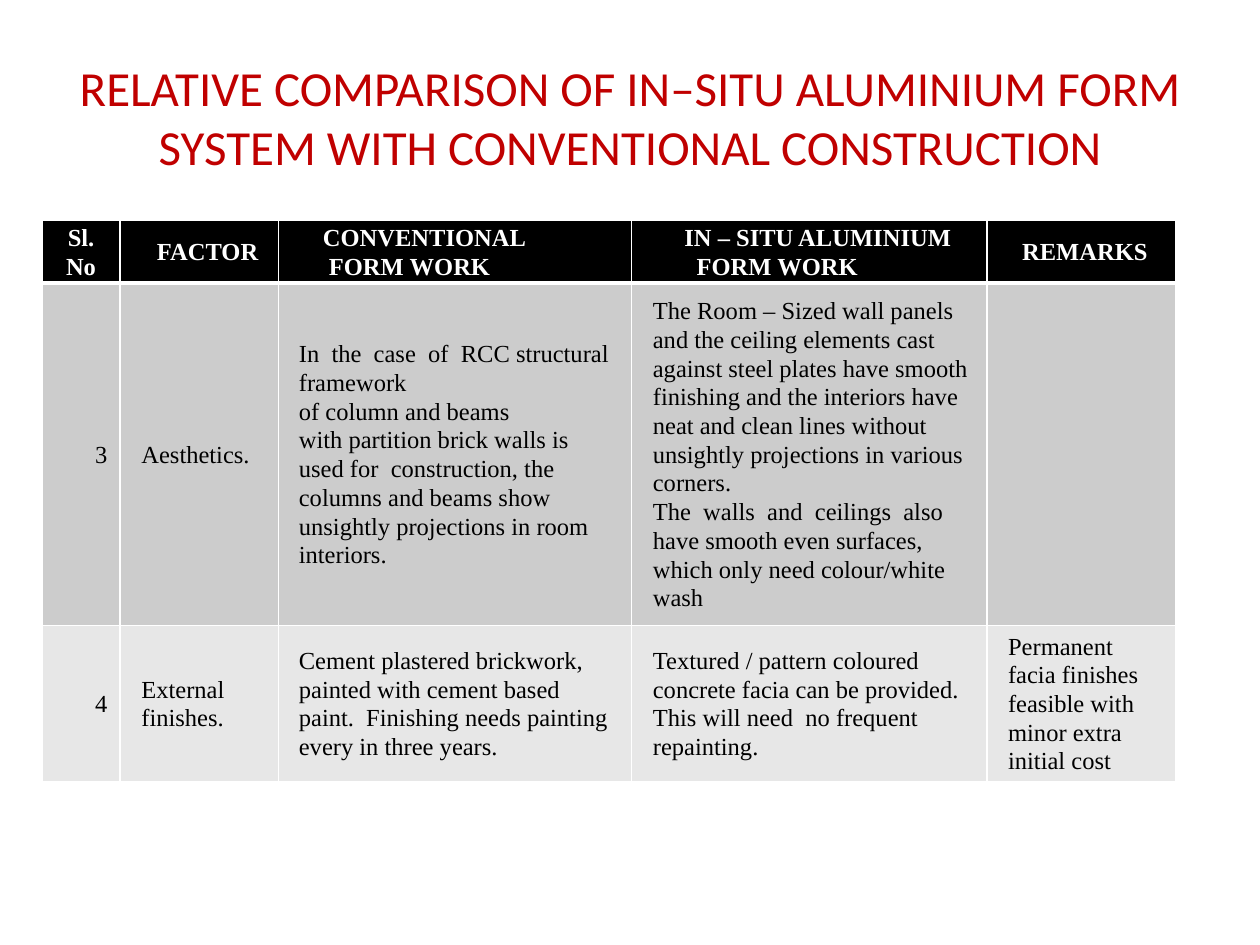
"""Build a slide that compares aluminium and conventional form work."""
from dataclasses import dataclass
from typing import Optional

from lxml.etree import SubElement
from pptx import Presentation
from pptx.dml.color import RGBColor as Rgb
from pptx.enum.text import MSO_ANCHOR as Anchor, PP_ALIGN as Align
from pptx.oxml.ns import qn
from pptx.util import Pt


@dataclass(frozen=True)
class Theme:
    red: str = "C00000"
    white: str = "FFFFFF"
    black: str = "000000"
    dark: str = "CCCCCC"
    light: str = "E7E7E7"
    head: str = "Calibri"
    body: str = "Times New Roman"
    big: float = 28
    small: float = 14
    lead: float = 1.06
    thin: float = 1
    thick: float = 3


@dataclass(frozen=True)
class Entry:
    text: str = ""
    dents: tuple = (0,)
    align: Optional[Align] = None


@dataclass(frozen=True)
class Band:
    height: float
    fill: str
    ink: str
    bold: bool
    top: float
    base: float
    cells: tuple


THEME = Theme()
WIDTHS = (44.6, 90.7, 201.6, 203, 108.1)
BANDS = (
    Band(33.5, THEME.black, THEME.white, True, THEME.thin, THEME.thick, (
        Entry("Sl. No", align=Align.CENTER),
        Entry("FACTOR", (9.4,), Align.CENTER),
        Entry("CONVENTIONAL\nFORM WORK", (18, 21.5)),
        Entry("IN – SITU ALUMINIUM\nFORM WORK", (23, 30)),
        Entry("REMARKS", (13,)),
    )),
    Band(186.5, THEME.dark, THEME.black, False, THEME.thick, THEME.thin, (
        Entry("3", align=Align.RIGHT),
        Entry("Aesthetics.", (5,)),
        Entry("In  the  case  of  RCC structural framework\n"
              "of column and beams\n"
              "with partition brick walls is used for  construction, the columns "
              "and beams show unsightly projections in room interiors.", (4.3,)),
        Entry("The Room – Sized wall panels and the ceiling elements cast against "
              "steel plates have smooth finishing and the interiors have neat and "
              "clean lines without unsightly projections in various corners.\n"
              "The  walls  and  ceilings  also have smooth even surfaces, which "
              "only need colour/white wash", (5,)),
        Entry(),
    )),
    Band(85, THEME.light, THEME.black, False, THEME.thin, THEME.thin, (
        Entry("4", align=Align.RIGHT),
        Entry("External\nfinishes.", (5,)),
        Entry("Cement plastered brickwork, painted with cement based paint.  "
              "Finishing needs painting every in three years.", (4.3,)),
        Entry("Textured / pattern coloured concrete facia can be provided. "
              "This will need  no frequent repainting.", (5,)),
        Entry("Permanent facia finishes feasible with minor extra initial cost",
              (5,)),
    )),
)


def style(para, face: str, size: float, ink: str, bold: bool = False) -> None:
    """Format every run of a paragraph."""
    for run in para.runs:
        font = run.font
        font.name, font.size, font.bold = face, Pt(size), bold
        font.color.rgb = Rgb.from_string(ink)


def add_title(slide, text: str) -> None:
    """Add the centred title."""
    frame = slide.shapes.add_textbox(Pt(36), Pt(21.6), Pt(648), Pt(90)).text_frame
    frame.word_wrap = True
    frame.vertical_anchor = Anchor.MIDDLE
    frame.text = text
    para = frame.paragraphs[0]
    para.alignment = Align.CENTER
    style(para, THEME.head, THEME.big, THEME.red)


def add_rules(cell, top: float, base: float) -> None:
    """Draw the four white borders of a cell."""
    props = cell._tc.get_or_add_tcPr()
    sides = {"L": THEME.thin, "R": THEME.thin, "T": top, "B": base}
    for spot, (side, width) in enumerate(sides.items()):
        line = SubElement(props, qn(f"a:ln{side}"), w=str(Pt(width)))
        paint = SubElement(line, qn("a:solidFill"))
        SubElement(paint, qn("a:srgbClr"), val=THEME.white)
        props.insert(spot, line)


def fill_cell(cell, entry: Entry, band: Band) -> None:
    """Set the fill, borders and text of a cell."""
    cell.fill.solid()
    cell.fill.fore_color.rgb = Rgb.from_string(band.fill)
    cell.vertical_anchor = Anchor.MIDDLE
    cell.margin_left = cell.margin_right = Pt(7.2)
    cell.margin_top = cell.margin_bottom = Pt(0)
    add_rules(cell, band.top, band.base)
    cell.text_frame.text = entry.text
    for spot, para in enumerate(cell.text_frame.paragraphs):
        dent = entry.dents[min(spot, len(entry.dents) - 1)]
        para._p.get_or_add_pPr().set("marL", str(Pt(dent)))
        para.alignment = entry.align
        para.line_spacing = THEME.lead
        style(para, THEME.body, THEME.small, band.ink, band.bold)


def add_grid(slide, bands: tuple) -> None:
    """Add the table with one row for each band."""
    grid = slide.shapes.add_table(
        len(bands), len(WIDTHS), Pt(24), Pt(126), Pt(sum(WIDTHS)),
        Pt(sum(band.height for band in bands))).table
    for col, width in zip(grid.columns, WIDTHS):
        col.width = Pt(width)
    for row, band in zip(grid.rows, bands):
        row.height = Pt(band.height)
        for cell, entry in zip(row.cells, band.cells):
            fill_cell(cell, entry, band)


def main() -> None:
    """Build and save the deck."""
    deck = Presentation()
    deck.slide_width, deck.slide_height = Pt(720), Pt(540)
    slide = deck.slides.add_slide(deck.slide_layouts[6])
    add_title(slide, "RELATIVE COMPARISON OF IN–SITU ALUMINIUM FORM\v"
                     "SYSTEM WITH CONVENTIONAL CONSTRUCTION")
    add_grid(slide, BANDS)
    deck.save("out.pptx")


if __name__ == "__main__":
    main()
